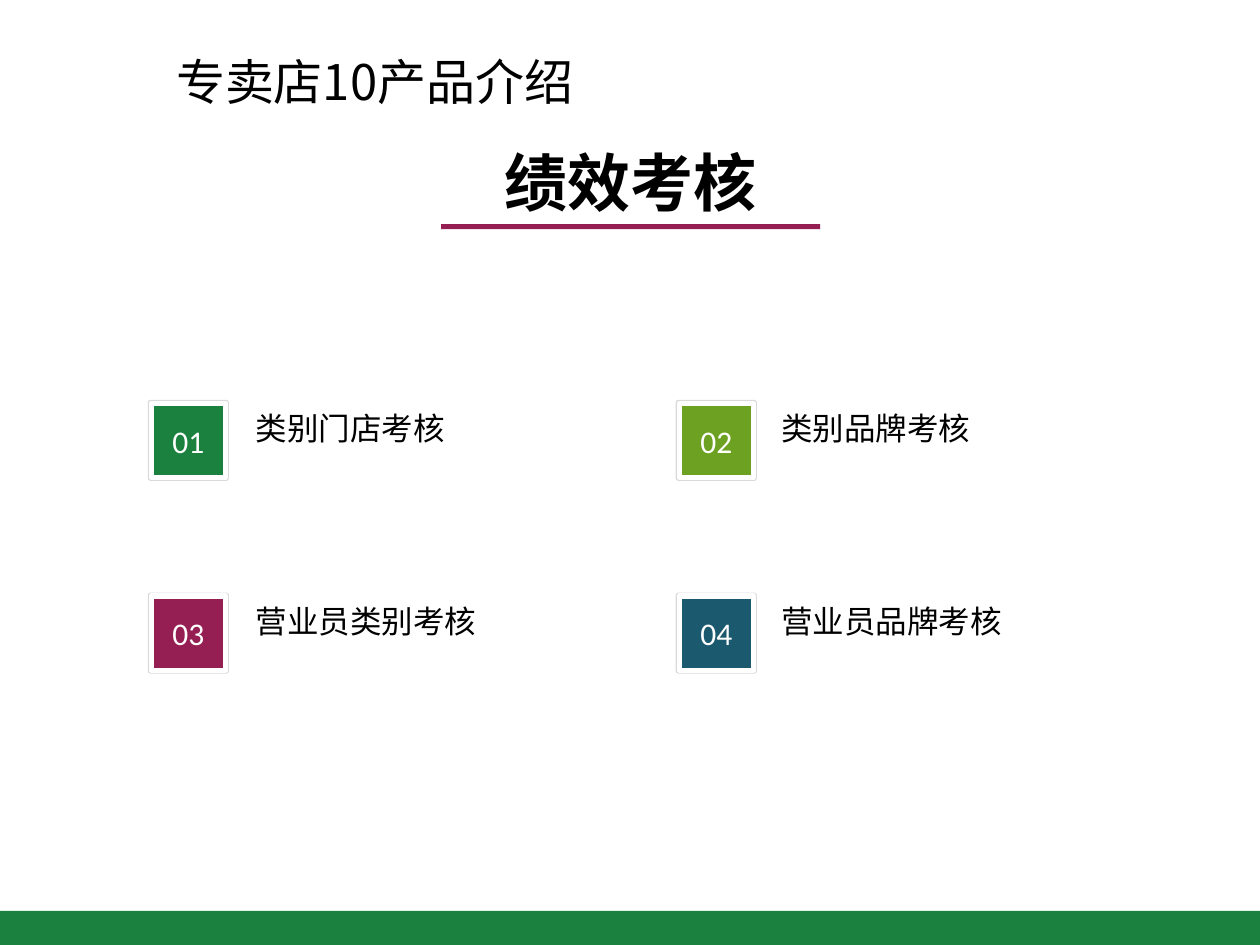
from lxml import etree
from pptx import Presentation
from pptx.dml.color import RGBColor
from pptx.enum import shapes, text
from pptx.oxml import parse_xml
from pptx.oxml.ns import nsdecls, qn
from pptx.util import Inches, Pt

CJK = "Noto Sans CJK SC"
GREEN, LIME, PLUM, TEAL = "1B813E", "6CA122", "951F53", "1A596E"

# Number, label and colour, row by row
ITEMS = [
    ("01", "类别门店考核", GREEN),
    ("02", "类别品牌考核", LIME),
    ("03", "营业员类别考核", PLUM),
    ("04", "营业员品牌考核", TEAL),
]
BADGE_X, LABEL_X, ROW_Y = (1.2, 5.39), (1.93, 6.1), (3.2, 4.73)
BADGE_SIZE = 0.59


def rgb(value):
    return RGBColor.from_string(value)


def box(left, top, width, height):
    return [Inches(v) for v in (left, top, width, height)]


def write(tf, content, size, font=CJK, color="000000", bold=False, align=None):
    p = tf.paragraphs[0]
    p.alignment = align
    r = p.add_run()
    r.text = content
    r.font.name, r.font.size, r.font.bold = font, Pt(size), bold
    r.font.color.rgb = rgb(color)
    # East Asian characters take their own typeface element
    ea = etree.SubElement(r.font._element, qn("a:ea"))
    ea.set("typeface", font)


def add_rect(s, color, *place):
    sp = s.shapes.add_shape(shapes.MSO_SHAPE.RECTANGLE, *box(*place))
    sp.shadow.inherit = False
    sp.fill.solid()
    sp.fill.fore_color.rgb = rgb(color)
    sp.line.fill.background()
    return sp


def add_text(s, content, size, *place):
    tf = s.shapes.add_textbox(*box(*place)).text_frame
    tf.word_wrap = True
    tf.auto_size = text.MSO_AUTO_SIZE.SHAPE_TO_FIT_TEXT
    write(tf, content, size)


def add_title(s, content):
    sp = s.shapes.title
    sp.left, sp.top, sp.width, sp.height = box(0.75, 0.92, 8.5, 1.04)
    sp.text_frame.vertical_anchor = text.MSO_ANCHOR.MIDDLE
    write(sp.text_frame, content, 36, bold=True, align=text.PP_ALIGN.CENTER)


def add_badge(s, number, color, left, top):
    sp = add_rect(s, color, left, top, BADGE_SIZE, BADGE_SIZE)
    sp.line.color.rgb = rgb("FFFFFF")
    sp.line.width = Pt(3)
    # Faint shadow, slightly larger than the badge
    effects = sp._element.spPr.find(qn("a:effectLst"))
    effects.append(parse_xml(
        f'<a:outerShdw {nsdecls("a")} sx="102000" sy="102000" algn="ctr" '
        'rotWithShape="0"><a:srgbClr val="000000"><a:alpha val="15000"/>'
        '</a:srgbClr></a:outerShdw>'))
    tf = sp.text_frame
    tf.word_wrap = False
    tf.vertical_anchor = text.MSO_ANCHOR.MIDDLE
    write(tf, number, 18, "Calibri", "FFFFFF", align=text.PP_ALIGN.CENTER)


def main():
    prs = Presentation()
    prs.slide_width, prs.slide_height = Inches(10), Inches(7.5)
    s = prs.slides.add_slide(prs.slide_layouts[5])

    # Footer band and section heading
    add_rect(s, GREEN, 0, 7.23, 10, 0.29)
    add_text(s, "专卖店10产品介绍", 28, 1.3, 0.36, 5.2, 0.57)

    # Title with its underline
    add_title(s, "绩效考核")
    add_rect(s, PLUM, 3.5, 1.78, 3.01, 0.04)

    # Two by two grid of numbered items
    for i, (number, label, color) in enumerate(ITEMS):
        row, col = divmod(i, 2)
        add_badge(s, number, color, BADGE_X[col], ROW_Y[row])
        add_text(s, label, 18, LABEL_X[col], ROW_Y[row], 2.68, 0.4)

    prs.save("out.pptx")


if __name__ == "__main__":
    main()
